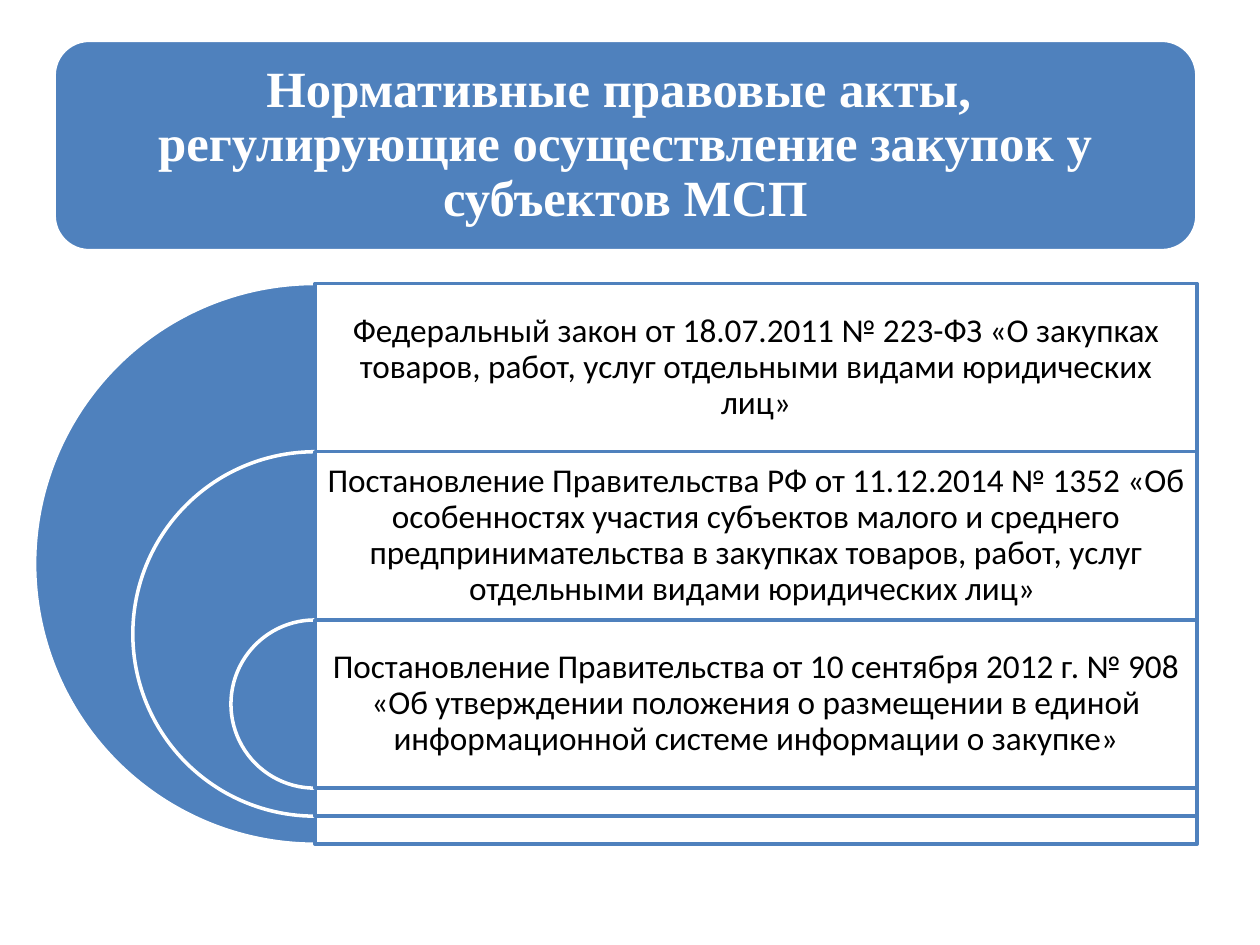
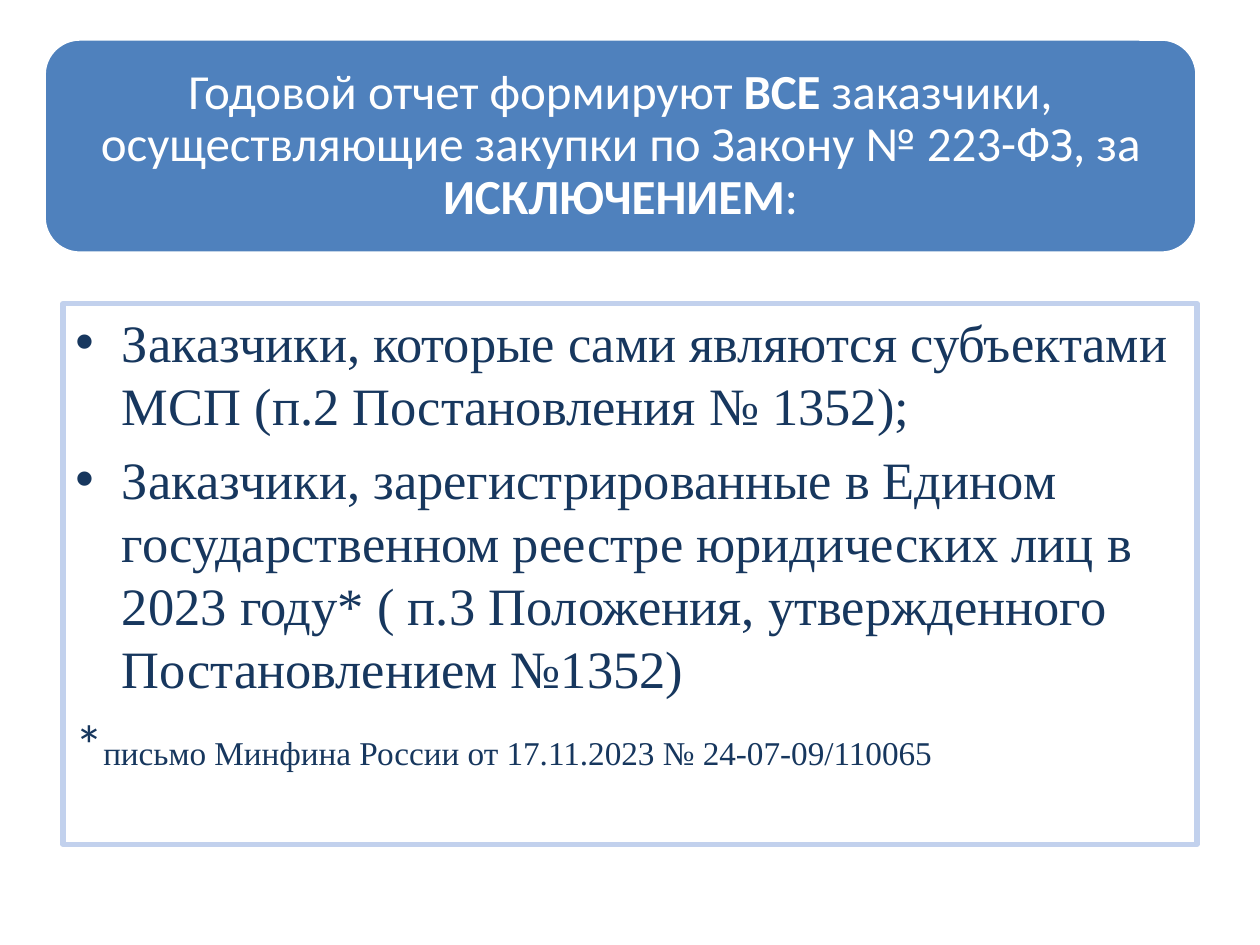
from lxml import etree
from pptx import Presentation
from pptx.dml.color import RGBColor
from pptx.enum.shapes import MSO_SHAPE
from pptx.enum.text import MSO_ANCHOR, PP_ALIGN
from pptx.oxml.ns import qn
from pptx.util import Inches, Pt

ROUNDED, HALF_DISC, BOX = MSO_SHAPE.ROUNDED_RECTANGLE, MSO_SHAPE.PIE, MSO_SHAPE.RECTANGLE
CENTER, LEFT = PP_ALIGN.CENTER, PP_ALIGN.LEFT
MIDDLE, TOP = MSO_ANCHOR.MIDDLE, MSO_ANCHOR.TOP

BLUE = RGBColor(0x4F, 0x81, 0xBD)
PALE_BLUE = RGBColor(0xC2, 0xD1, 0xED)
NAVY = RGBColor(0x17, 0x37, 0x5E)
WHITE = RGBColor(0xFF, 0xFF, 0xFF)
BLACK = RGBColor(0, 0, 0)
SANS, SERIF = "Calibri", "Times New Roman"

SLIDE_W, SLIDE_H = 10, 7.5
RIGHT_EDGE, BOTTOM_EDGE = 9.5, 6.7

ACTS_TITLE = [("Нормативные правовые акты, \nрегулирующие осуществление закупок у субъектов МСП",
               {"bold": True})]
ACTS = [
    "Федеральный закон от 18.07.2011 № 223-ФЗ «О закупках товаров, работ, услуг "
    "отдельными видами юридических лиц»",
    "Постановление Правительства РФ от 11.12.2014 № 1352 «Об особенностях участия "
    "субъектов малого и среднего предпринимательства в закупках товаров, работ, услуг "
    "отдельными видами юридических лиц» ",
    "Постановление Правительства от 10 сентября 2012 г. № 908 «Об утверждении положения "
    "о размещении в единой информационной системе информации о закупке»",
]
REPORT_TITLE = [
    ("Годовой отчет формируют ", {}),
    ("ВСЕ", {"bold": True}),
    (" заказчики, осуществляющие закупки по Закону № 223-ФЗ, за ", {}),
    ("ИСКЛЮЧЕНИЕМ", {"bold": True}),
    (":", {}),
]
EXCEPTIONS = [
    "Заказчики, которые сами являются субъектами МСП (п.2 Постановления № 1352);",
    "Заказчики, зарегистрированные в Едином государственном реестре юридических лиц "
    "в 2023 году* ( п.3 Положения, утвержденного Постановлением №1352)",
]
FOOTNOTE = [
    ("*", {"size": 32, "font": SANS}),
    ("письмо Минфина России от 17.11.2023 № 24-07-09/110065", {"size": 19}),
]

RING_CENTER, RINGS_TOP = 2.5, 2.25
OUTER_RING = 4.45
ACT_H = OUTER_RING * 0.3
RING_SHRINK = OUTER_RING * 0.35


def add_block(slide, kind, left, top, width, height, fill, line, line_width=2, opacity=None):
    block = slide.shapes.add_shape(kind, *map(Inches, (left, top, width, height)))
    block.shadow.inherit = False
    if fill is None:
        block.fill.background()
    else:
        block.fill.solid()
        block.fill.fore_color.rgb = fill
    if opacity:
        color = block.fill._xPr.find(qn("a:solidFill"))[0]
        etree.SubElement(color, qn("a:alpha"), val=str(opacity * 1000))
    block.line.color.rgb = line
    block.line.width = Pt(line_width)
    return block


def set_text(block, paragraphs, size, font, color, align=CENTER, anchor=MIDDLE,
             insets=(0.1, 0.05, 0.1, 0.05), spacing=None, before=0, bullets=0, indent=0.37):
    frame = block.text_frame
    frame.word_wrap = True
    frame.vertical_anchor = anchor
    (frame.margin_left, frame.margin_top,
     frame.margin_right, frame.margin_bottom) = map(Inches, insets)
    for number, runs in enumerate(paragraphs):
        paragraph = frame.paragraphs[0] if number == 0 else frame.add_paragraph()
        paragraph.alignment = align
        paragraph.space_before = Pt(before)
        if spacing:
            paragraph.line_spacing = spacing
        if number < bullets:
            props = paragraph._p.get_or_add_pPr()
            props.set("marL", str(Inches(indent)))
            props.set("indent", str(-Inches(indent)))
            etree.SubElement(props, qn("a:buFont"), typeface="Arial")
            etree.SubElement(props, qn("a:buChar"), char="•")
        for words, style in runs:
            for part, piece in enumerate(words.split("\n")):
                if part:
                    paragraph.add_line_break()
                run = paragraph.add_run()
                run.text = piece
                run.font.size = Pt(style.get("size", size))
                run.font.name = style.get("font", font)
                run.font.bold = style.get("bold", False)
                run.font.color.rgb = color


def add_title(slide, runs, left, top, height, size, font):
    banner = add_block(slide, ROUNDED, left, top, RIGHT_EDGE - left, height, BLUE, WHITE)
    set_text(banner, [runs], size, font, WHITE, insets=(0.12,) * 4, spacing=0.9)


def build_acts(slide):
    add_title(slide, ACTS_TITLE, 0.43, 0.32, 1.67, 29, SERIF)
    for level, act in enumerate(ACTS):
        diameter = OUTER_RING - level * RING_SHRINK
        top = RINGS_TOP + level * ACT_H
        ring = add_block(slide, HALF_DISC, RING_CENTER - diameter / 2, top,
                         diameter, diameter, BLUE, WHITE)
        ring.adjustments[0], ring.adjustments[1] = 54, 162
        panel = add_block(slide, BOX, RING_CENTER, top, RIGHT_EDGE - RING_CENTER, diameter,
                          WHITE, BLUE, opacity=90)
        below_act = diameter - ACT_H
        set_text(panel, [[(act, {})]], 19, SANS, BLACK,
                 insets=(0.08, 0.08, 0.08, 0.08 + below_act), spacing=0.9)


def build_report(slide):
    add_title(slide, REPORT_TITLE, 0.35, 0.31, 1.7, 28, SANS)
    left, top = 0.5, 2.41
    frame = add_block(slide, BOX, left, top, RIGHT_EDGE - left, BOTTOM_EDGE - top,
                      None, PALE_BLUE, line_width=3)
    set_text(frame, [[(item, {})] for item in EXCEPTIONS] + [FOOTNOTE], 30, SERIF, NAVY,
             align=LEFT, anchor=TOP, before=6.2, bullets=len(EXCEPTIONS))


def main():
    deck = Presentation()
    deck.slide_width, deck.slide_height = Inches(SLIDE_W), Inches(SLIDE_H)
    for build in (build_acts, build_report):
        build(deck.slides.add_slide(deck.slide_layouts[6]))
    deck.save("out.pptx")


if __name__ == "__main__":
    main()
